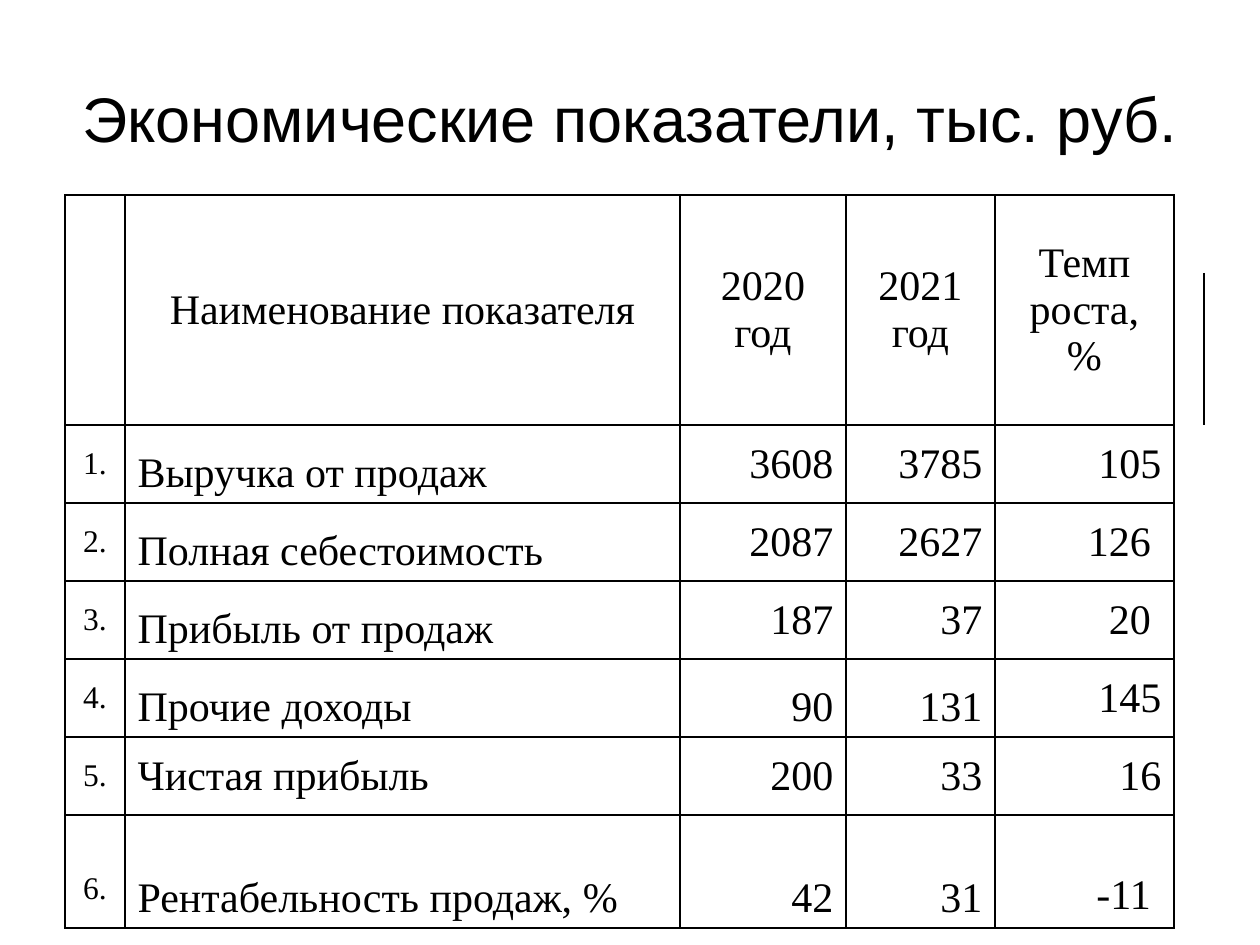
from lxml.etree import SubElement as Sub
from pptx import Presentation
from pptx.dml.color import RGBColor
from pptx.enum.text import MSO_ANCHOR as Anchor, PP_ALIGN as Align
from pptx.oxml.ns import qn
from pptx.util import Pt

UNIT = 914400 / 126
HUES = {"ink": "000000", "paper": "FFFFFF"}
COLS = [60, 555, 166, 149, 179, 29]
TALL = [78, 86] + [78] * 5 + [113]
HEAD = ["", "Наименование показателя", "2020 год", "2021 год", "Темп роста, %"]
DATA = [
    ("mbmmm", ["1.", "Выручка от продаж", "3608", "3785", "105"]),
    ("mbmmm", ["2.", "Полная себестоимость", "2087", "2627", "126 "]),
    ("mbmmm", ["3.", "Прибыль от продаж", "187", "37", "20 "]),
    ("mbbbm", ["4.", "Прочие доходы", "90", "131", "145"]),
    ("mmmmm", ["5.", "Чистая прибыль", "200", "33", "16"]),
    ("mbbbm", ["6.", "Рентабельность продаж, %", "42", "31", "-11 "]),
]
ANCHORS = {"m": Anchor.MIDDLE, "b": Anchor.BOTTOM}
ALIGNS = [Align.CENTER, Align.LEFT] + [Align.RIGHT] * 3
SIZES = [18] + [24] * 4


def px(num):
    return round(num * UNIT)


def style(para, face, size, align):
    para.alignment = align
    for run in para.runs:
        run.font.name = face
        run.font.size = Pt(size)
        run.font.color.rgb = RGBColor.from_string(HUES["ink"])


def edge(cell, sides):
    props = cell._tc.get_or_add_tcPr()
    for side in "LRTB":
        line = Sub(props, qn("a:ln" + side), w=str(Pt(1)))
        if side in sides:
            fill = Sub(line, qn("a:solidFill"))
            Sub(fill, qn("a:srgbClr"), val=HUES["ink"])
        else:
            Sub(line, qn("a:noFill"))


def write(cell, text, size, align, anchor):
    cell.text_frame.text = text
    cell.vertical_anchor = anchor
    style(cell.text_frame.paragraphs[0], "Times New Roman", size, align)


def add_title(slide, left, top, wide, high):
    title = slide.shapes.title
    title.left, title.top = px(left), px(top)
    title.width, title.height = px(wide), px(high)
    frame = title.text_frame
    frame.text = "Экономические показатели, тыс. руб."
    frame.vertical_anchor = Anchor.MIDDLE
    style(frame.paragraphs[0], "Arial", 36, Align.CENTER)


def add_grid(slide, left, top):
    grid = slide.shapes.add_table(
        len(TALL), len(COLS), px(left), px(top), px(sum(COLS)), px(sum(TALL))
    ).table
    grid.first_row = grid.horz_banding = False
    for col, wide in zip(grid.columns, COLS):
        col.width = px(wide)
    for row, high in zip(grid.rows, TALL):
        row.height = px(high)

    last = len(COLS) - 1
    for r in range(len(TALL)):
        for c in range(len(COLS)):
            cell = grid.cell(r, c)
            edge(cell, "LRTB" if c < last else "LR" if r == 1 else "L")
            cell.fill.solid()
            cell.fill.fore_color.rgb = RGBColor.from_string(HUES["paper"])

    for c, text in enumerate(HEAD):
        grid.cell(0, c).merge(grid.cell(1, c))
        write(grid.cell(0, c), text, 24, Align.CENTER, Anchor.MIDDLE)
    for r, (marks, texts) in enumerate(DATA, 2):
        for c, (mark, text) in enumerate(zip(marks, texts)):
            write(grid.cell(r, c), text, SIZES[c], ALIGNS[c], ANCHORS[mark])

    end = len(TALL) - 1
    grid.cell(end, 0).margin_top = px(42)
    grid.cell(end, 4).margin_top = px(54)


def main():
    deck = Presentation()
    deck.slide_width, deck.slide_height = px(1260), px(945)
    slide = deck.slides.add_slide(deck.slide_layouts[5])
    add_title(slide, 63, 38, 1134, 158)
    add_grid(slide, 65, 195)
    deck.save("out.pptx")


if __name__ == "__main__":
    main()
